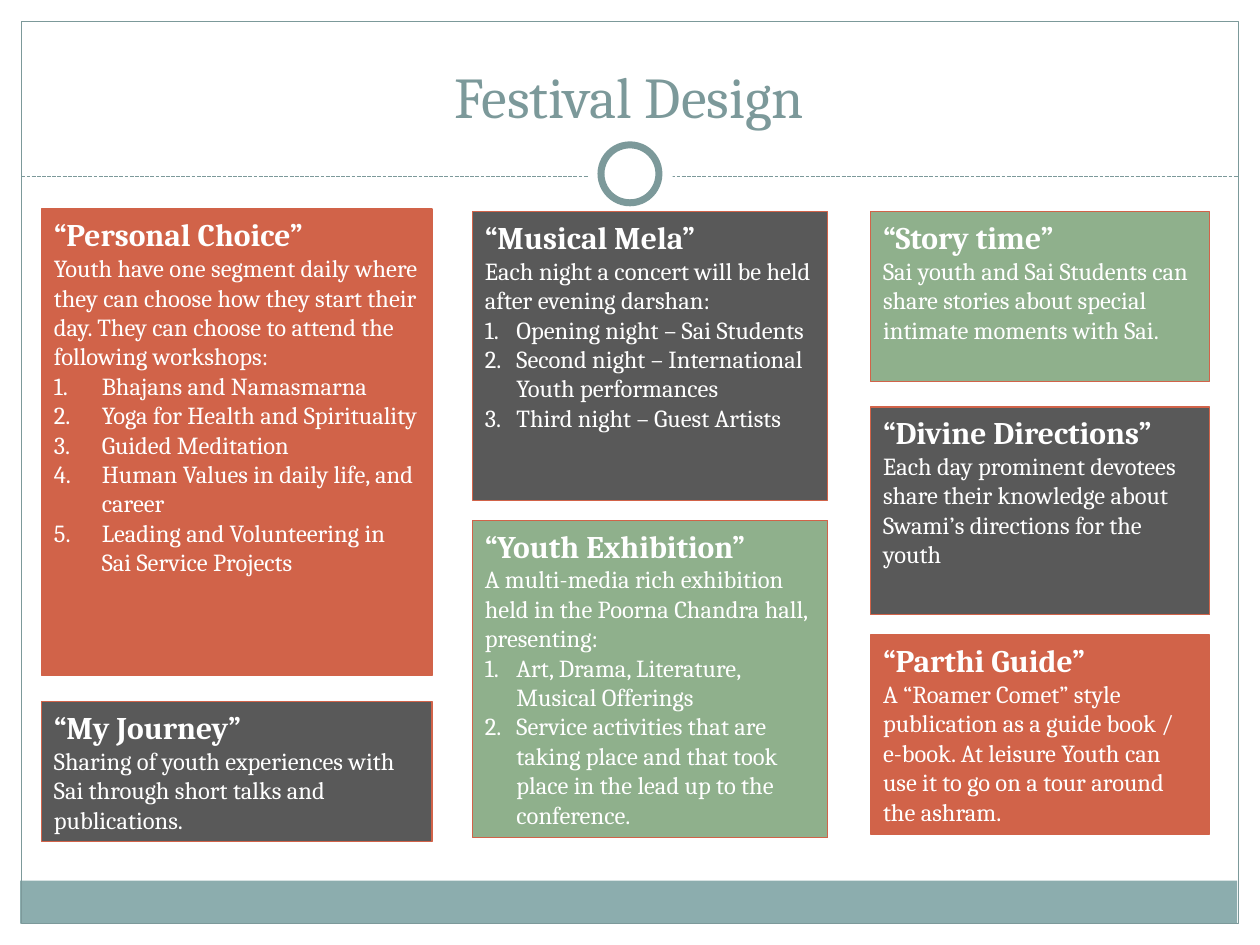
from lxml import etree
from pptx import Presentation, util as u
from pptx.dml.color import RGBColor
from pptx.enum import dml, shapes, text
from pptx.oxml.ns import qn

COLS, ROWS = 100, 75
TEAL, BAND, WHITE = "7C999A", "8CADAE", "FFFFFF"
RUST, GREY, GREEN = "D16349", "595959", "8FB08C"


def rgb(value):
    return RGBColor.from_string(value)


def assign(target, values):
    for name, value in values.items():
        setattr(target, name, value)


class Deck:
    font = "Cambria"
    heading = {"size": u.Pt(18), "bold": True}
    body = {"size": u.Pt(14), "bold": False}

    def __init__(self):
        self.prs = Presentation()
        assign(self.prs, {"slide_width": u.Inches(10), "slide_height": u.Inches(7.5)})
        self.s = self.prs.slides.add_slide(self.prs.slide_layouts[5])

    def x(self, col):
        return round(self.prs.slide_width * col / COLS)

    def y(self, row):
        return round(self.prs.slide_height * row / ROWS)

    def area(self, col, row, width, height):
        return self.x(col), self.y(row), self.x(width), self.y(height)

    def run(self, p, words, color, style):
        r = p.add_run()
        r.text = words
        assign(r.font, {"name": self.font, **style})
        r.font.color.rgb = rgb(color)

    def title(self, words, *area):
        sp = self.s.shapes.title
        assign(sp, dict(zip(("left", "top", "width", "height"), self.area(*area))))
        tf = sp.text_frame
        assign(tf, {"vertical_anchor": text.MSO_ANCHOR.BOTTOM, "word_wrap": True,
                    "auto_size": text.MSO_AUTO_SIZE.NONE})
        p = tf.paragraphs[0]
        p.alignment = text.PP_ALIGN.CENTER
        self.run(p, words, TEAL, {"size": u.Pt(33)})

    def shape(self, kind, area, fill=None, line=None, weight=0.75):
        sp = self.s.shapes.add_shape(kind, *self.area(*area))
        sp.shadow.inherit = False
        if fill:
            sp.fill.solid()
            sp.fill.fore_color.rgb = rgb(fill)
        else:
            sp.fill.background()
        if line:
            sp.line.color.rgb = rgb(line)
            sp.line.width = u.Pt(weight)
        else:
            sp.line.fill.background()
        return sp

    def dashes(self, left, right, row):
        sp = self.s.shapes.add_connector(
            shapes.MSO_CONNECTOR.STRAIGHT, self.x(left), self.y(row), self.x(right), self.y(row))
        sp.line.color.rgb = rgb(TEAL)
        assign(sp.line, {"width": u.Pt(0.75), "dash_style": dml.MSO_LINE.SQUARE_DOT})
        etree.SubElement(sp._element.spPr, qn("a:effectLst"))

    def number(self, p, indent):
        pPr = p._p.get_or_add_pPr()
        pPr.set("marL", str(u.Inches(indent)))
        pPr.set("indent", str(-u.Inches(indent)))
        etree.SubElement(pPr, qn("a:buFont"), typeface="+mj-lt")
        etree.SubElement(pPr, qn("a:buAutoNum"), type="arabicPeriod")

    def card(self, area, fill, name, intro, items=(), indent=0.25):
        sp = self.shape(shapes.MSO_SHAPE.RECTANGLE, area, fill, RUST)
        tf = sp.text_frame
        assign(tf, {"vertical_anchor": text.MSO_ANCHOR.TOP, "word_wrap": True})
        for i, words in enumerate((name, intro, *items)):
            p = tf.add_paragraph() if i else tf.paragraphs[0]
            p.alignment = text.PP_ALIGN.LEFT
            if i > 1:
                self.number(p, indent)
            self.run(p, words, WHITE, self.body if i else self.heading)


COLUMNS = [
    (3.3, 31, [
        (16.6, 37, RUST, "“Personal Choice”",
         "Youth have one segment daily where they can choose how they start their day. "
         "They can choose to attend the following workshops:",
         ["Bhajans and Namasmarna", "Yoga for Health and Spirituality", "Guided Meditation",
          "Human Values in daily life, and career",
          "Leading and Volunteering in Sai Service Projects"], 0.38),
        (55.7, 11.1, GREY, "“My Journey”",
         "Sharing of youth experiences with Sai through short talks and publications."),
    ]),
    (37.5, 28.2, [
        (16.8, 22.9, GREY, "“Musical Mela”",
         "Each night a concert will be held after evening darshan:",
         ["Opening night – Sai Students", "Second night – International Youth performances",
          "Third night – Guest Artists"]),
        (41.3, 25.2, GREEN, "“Youth Exhibition”",
         "A multi-media rich exhibition held in the Poorna Chandra hall, presenting:",
         ["Art, Drama, Literature, Musical Offerings",
          "Service activities that are taking place and that took place in the lead up "
          "to the conference."]),
    ]),
    (69.1, 26.9, [
        (16.8, 13.5, GREEN, "“Story time”",
         "Sai youth and Sai Students can share stories about special intimate moments with Sai."),
        (32.3, 16.5, GREY, "“Divine Directions”",
         "Each day prominent devotees share their knowledge about Swami’s directions "
         "for the youth"),
        (50.4, 15.8, RUST, "“Parthi Guide”",
         "A “Roamer Comet” style publication as a guide book / e-book. "
         "At leisure Youth can use it to go on a tour around the ashram."),
    ]),
]


def main():
    deck = Deck()
    box, oval = shapes.MSO_SHAPE.RECTANGLE, shapes.MSO_SHAPE.OVAL
    deck.shape(box, (1.6, 69.9, 96.6, 3.4), BAND)
    deck.shape(box, (1.7, 1.7, 96.6, 71.6), line=TEAL)
    deck.dashes(1.7, 98.3, 14)
    deck.shape(oval, (46.7, 10.5, 6.7, 6.7), WHITE)
    deck.shape(oval, (47.7, 11.5, 4.6, 4.6), WHITE, TEAL, 4)
    deck.title("Festival Design", 3.3, 2.5, 93.3, 8.3)
    for left, width, cards in COLUMNS:
        for top, height, *content in cards:
            deck.card((left, top, width, height), *content)
    deck.prs.save("out.pptx")


if __name__ == "__main__":
    main()
